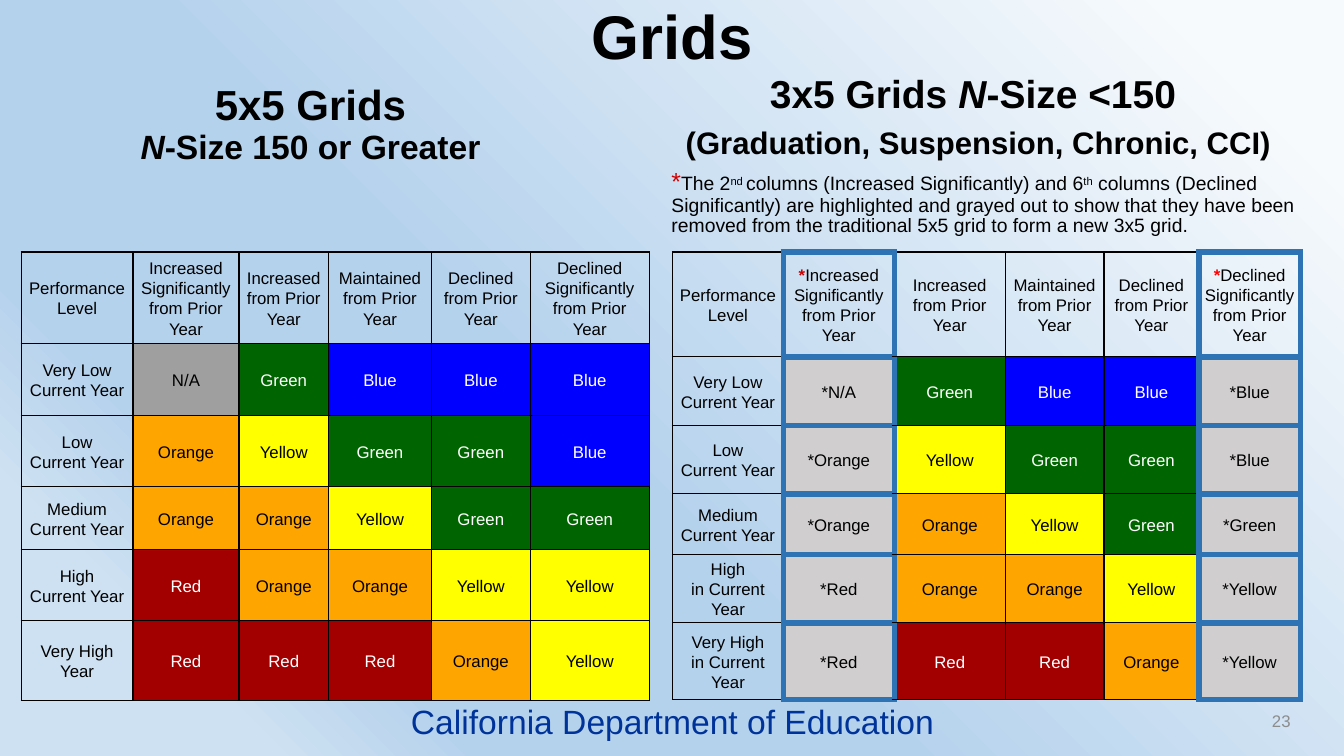
from lxml import etree
from pptx import Presentation
from pptx.dml.color import RGBColor
from pptx.enum.text import MSO_ANCHOR as Anchor, MSO_AUTO_SIZE as AutoSize, PP_ALIGN as Align
from pptx.oxml.ns import qn
from pptx.util import Inches, Pt

COLORS = {
    "black": "000000", "white": "FFFFFF", "star": "CC0000", "bright star": "FF0000",
    "border": "2E74B5", "removed": "D0CECE", "footer": "003399", "number": "8C8C8C",
    "N/A": "9F9F9F", "Green": "006500", "Blue": "0000FF", "Yellow": "FFFF00",
    "Orange": "FFA500", "Red": "A20000",
}
DARK_LEVELS = {"Green", "Blue", "Red"}


def add_runs(paragraph, runs, size, color="black", bold=False):
    """Add (text, overrides) runs; overrides are font values or a baseline."""
    for text, overrides in runs:
        run = paragraph.add_run()
        run.text = text
        values = {"name": "Arial", "size": Pt(size), "bold": bold, "italic": False, **overrides}
        run.font.color.rgb = RGBColor.from_string(COLORS[values.pop("color", color)])
        baseline = values.pop("baseline", None)
        if baseline:
            run.font._element.set("baseline", str(baseline))
        for name, value in values.items():
            setattr(run.font, name, value)


def format_frame(shape, box, anchor):
    """Place a text shape and return its text frame."""
    shape.left, shape.top, shape.width, shape.height = map(Inches, box)
    text_frame = shape.text_frame
    text_frame.word_wrap = True
    text_frame.auto_size = AutoSize.NONE
    text_frame.vertical_anchor = anchor
    return text_frame


presentation = Presentation()
presentation.slide_width, presentation.slide_height = Inches(13.33), Inches(7.5)
slide = presentation.slides.add_slide(presentation.slide_layouts[4])

# Background gradient, light in the top right corner
background = slide.background.fill
background.gradient()
background.gradient_angle = 225
stops = slide.element.find(".//" + qn("a:gsLst"))
stops.clear()
for position, color in [(8, "F7FAFD"), (57, "B5D2EC"), (77, "B5D2EC"), (87, "CEE1F2")]:
    stop = etree.SubElement(stops, qn("a:gs"), pos=str(position * 1000))
    etree.SubElement(stop, qn("a:srgbClr"), val=color)

# Title, headings and note: placeholder, box, anchor, alignment, line spacing,
# then paragraphs as (size, bold, space before, space after, runs)
italic, superscript = {"italic": True}, {"baseline": 30000}
texts = [
    (0, (0.59, 0, 12.16, 0.79), Anchor.MIDDLE, Align.CENTER, 0.9,
     [(44, True, 0, 0, [("Grids", {})])]),
    (1, (0.73, 0.79, 4.7, 0.93), Anchor.TOP, Align.CENTER, 0.9,
     [(30, True, 0, 0, [("5x5 Grids", {})]),
      (24, True, 0, 0, [("N", italic), ("-Size 150 or Greater", {})])]),
    (3, (6.56, 0.59, 6.29, 1.05), Anchor.TOP, Align.CENTER, 1.1,
     [(27.8, True, 0, 0, [("3x5 Grids ", {}), ("N", italic), ("-Size <150 ", {})]),
      (22.2, True, 3, 0, [("(Graduation, Suspension, Chronic, CCI)", {})])]),
    (2, (6.56, 1.64, 6.97, 0.93), Anchor.TOP, Align.LEFT, 0.87,
     [(13.8, False, 0, 8, [
         ("*", {"size": Pt(17.6), "color": "star"}), ("The 2", {}), ("nd ", superscript),
         ("columns (Increased Significantly) and 6", {}), ("th", superscript),
         (" columns (Declined Significantly) are highlighted and grayed out to show that they "
          "have been removed from the traditional 5x5 grid to form a new 3x5 grid.", {})])]),
]
placeholders = {shape.placeholder_format.idx: shape for shape in slide.placeholders}
for index, box, anchor, alignment, line_spacing, paragraphs in texts:
    text_frame = format_frame(placeholders[index], box, anchor)
    for number, (size, bold, before, after, runs) in enumerate(paragraphs):
        paragraph = text_frame.add_paragraph() if number else text_frame.paragraphs[0]
        properties = paragraph._p.get_or_add_pPr()
        properties.set("marL", "0")
        properties.set("indent", "0")
        paragraph.alignment, paragraph.line_spacing = alignment, line_spacing
        paragraph.space_before, paragraph.space_after = Pt(before), Pt(after)
        etree.SubElement(properties, qn("a:buNone"))
        add_runs(paragraph, runs, size, bold=bold)
unused = placeholders[4].element
unused.getparent().remove(unused)

# Grid contents: \n starts a paragraph, \v breaks a line
headers = ["Performance Level"] + [
    f"{change}\nfrom Prior Year" for change in
    ("Increased Significantly", "Increased", "Maintained", "Declined", "Declined Significantly")]
levels = [
    ["N/A", "Green", "Blue", "Blue", "Blue"],
    ["Orange", "Yellow", "Green", "Green", "Blue"],
    ["Orange", "Orange", "Yellow", "Green", "Green"],
    ["Red", "Orange", "Orange", "Yellow", "Yellow"],
    ["Red", "Red", "Red", "Orange", "Yellow"],
]
common_labels = ["Very Low\nCurrent Year", "Low\vCurrent Year", "Medium\nCurrent Year"]
grids = [
    {"left": 0.21, "removed": {}, "widths": [1.11, 1.05, 0.89, 1.02, 0.98, 1.18],
     "heights": [0.91, 0.71, 0.71, 0.62, 0.71, 0.79],
     "labels": common_labels + ["High\nCurrent Year", "Very High\vYear"]},
    {"left": 6.67, "removed": {1: "star", 5: "bright star"},
     "widths": [1.1, 1.1, 1.1, 0.98, 0.94, 1.01],
     "heights": [1.04, 0.68, 0.68, 0.6, 0.68, 0.76],
     "labels": common_labels + ["High\nin Current Year", "Very High\vin Current Year"]},
]
cell_format = {"margin_left": Inches(0.04), "margin_right": Inches(0.04),
               "margin_top": Inches(0.01), "margin_bottom": 0, "vertical_anchor": Anchor.MIDDLE}

for grid in grids:
    removed = grid["removed"]
    table = slide.shapes.add_table(
        6, 6, Inches(grid["left"]), Inches(2.5),
        Inches(sum(grid["widths"])), Inches(sum(grid["heights"]))).table
    table.first_row = table.horz_banding = False
    for column, width in zip(table.columns, grid["widths"]):
        column.width = Inches(width)
    for row, height in zip(table.rows, grid["heights"]):
        row.height = Inches(height)

    rows = [headers] + [[label] + line for label, line in zip(grid["labels"], levels)]
    for row_index, values in enumerate(rows):
        for column_index, value in enumerate(values):
            cell = table.cell(row_index, column_index)
            for name, setting in cell_format.items():
                setattr(cell, name, setting)

            # Fill by level, gray in the removed columns
            is_level = row_index > 0 and column_index > 0
            is_removed = column_index in removed
            color = "white" if value in DARK_LEVELS and not is_removed else "black"
            if is_level:
                cell.fill.solid()
                fill = "removed" if is_removed else value
                cell.fill.fore_color.rgb = RGBColor.from_string(COLORS[fill])
            else:
                cell.fill.background()

            # Text, with a red star in the removed headers
            cell.text_frame.text = "*" + value if is_level and is_removed else value
            for number, paragraph in enumerate(cell.text_frame.paragraphs):
                paragraph.alignment, paragraph.line_spacing = Align.CENTER, 1.07
                pieces = paragraph.text.split("\v")
                paragraph.clear()
                if row_index == 0 and is_removed and number == 0:
                    star = {"color": removed[column_index], "bold": True}
                    add_runs(paragraph, [("*", star)], 12)
                for piece_index, piece in enumerate(pieces):
                    if piece_index:
                        paragraph.add_line_break()
                    add_runs(paragraph, [(piece, {})], 12, color)

            # Borders, thick around the removed columns
            neighbors = {"lnL": column_index - 1, "lnR": column_index + 1,
                         "lnT": column_index, "lnB": column_index}
            cell_properties = cell._tc.get_or_add_tcPr()
            for position, (side, neighbor) in enumerate(neighbors.items()):
                thick = is_removed or neighbor in removed
                line = etree.Element(qn("a:" + side), w=str(Pt(4.5 if thick else 1)))
                solid = etree.SubElement(line, qn("a:solidFill"))
                etree.SubElement(solid, qn("a:srgbClr"),
                                 val=COLORS["border" if thick else "black"])
                cell_properties.insert(position, line)

# Footer and slide number
for text, box, size, color, alignment in [
    ("California Department of Education", (3.93, 6.95, 5.48, 0.4), 24, "footer", Align.CENTER),
    ("23", (9.9, 6.95, 3, 0.4), 12, "number", Align.RIGHT),
]:
    text_box = slide.shapes.add_textbox(*map(Inches, box))
    paragraph = format_frame(text_box, box, Anchor.MIDDLE).paragraphs[0]
    paragraph.alignment = alignment
    add_runs(paragraph, [(text, {})], size, color)

presentation.save("out.pptx")
